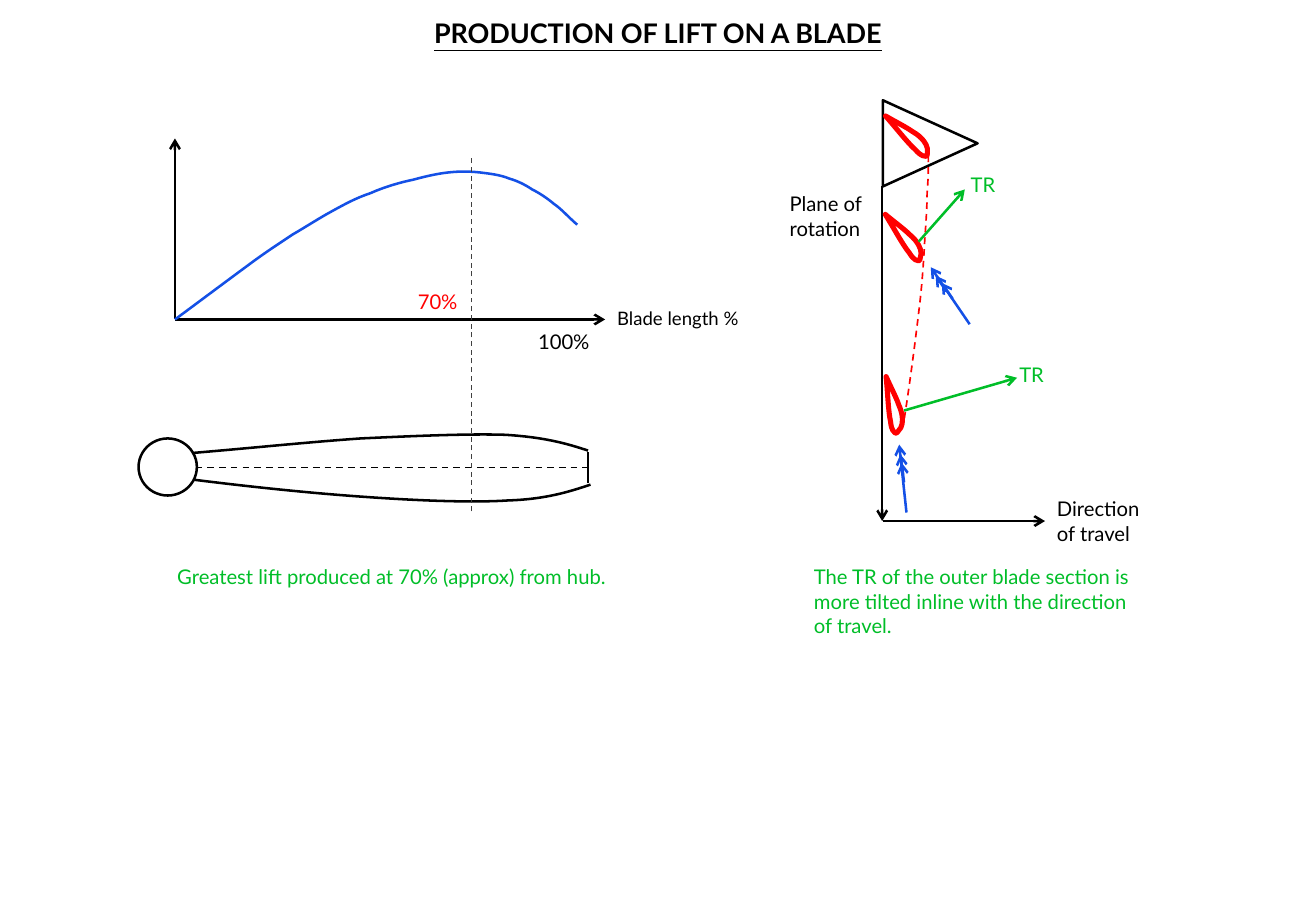
import dataclasses
import typing

import lxml.etree
import pptx
import pptx.dml.color
import pptx.enum.dml
import pptx.enum.shapes
import pptx.enum.text
import pptx.oxml.ns
import pptx.util

PX = 9144  # EMU in one px, 100 px to the inch
FONT = "Lato"
COLORS = {"black": "000000", "blue": "1450E6", "red": "FF0000", "green": "00BE28", "grey": "404040"}
DASH = pptx.enum.dml.MSO_LINE.DASH
SHAPE = pptx.enum.shapes.MSO_SHAPE
Point = tuple[int, int]


@dataclasses.dataclass(frozen=True)
class Label:
    text: str
    left: int
    top: int
    width: int
    height: int = 30
    color: str = "black"
    size: int = 12
    heading: bool = False


@dataclasses.dataclass(frozen=True)
class Stroke:
    begin: Point
    end: Point
    color: str = "black"
    width: float = 1.5
    dashed: bool = False
    arrow: bool = True


@dataclasses.dataclass(frozen=True)
class Curve:
    """Cubic curve: a start point, then two handles and an end per segment."""
    points: list[Point]
    color: str = "black"
    width: float = 1.5
    dashed: bool = False


@dataclasses.dataclass(frozen=True)
class Section:
    left: int
    top: int
    rotation: float


TITLE = Label("PRODUCTION OF LIFT ON A BLADE", 0, 9, 1083, 37, size=16, heading=True)
LENGTH_LABEL = Label("Blade length %", 498, 248, 148, size=11)
TRAVEL_LABEL = Label("Direction\nof travel", 860, 404, 94, 50)
LABELS = [
    TITLE,
    Label("70%", 334, 233, 134, color="red"),
    Label("100%", 433, 266, 173),
    Label("Greatest lift produced at 70% (approx) from hub.", 136, 460, 535, color="green"),
    Label("Plane of\nrotation", 640, 153, 90, 50),
    Label("TR", 789, 137, 94, color="green"),
    Label("TR", 829, 293, 94, color="green"),
    Label("The TR of the outer blade section is more tilted inline with the direction of travel.",
          660, 460, 295, 71, color="green"),
]

LIFT_AXIS = Stroke((144, 263), (144, 114))
LENGTH_AXIS = Stroke((144, 263), (498, 263))
PEAK_LINE = Stroke((388, 421), (388, 129), "grey", 0.75, dashed=True, arrow=False)
LIFT_CURVE = Curve([
    (144, 263), (163, 249), (183, 234), (202, 220), (218, 208), (229, 201), (241, 193),
    (253, 186), (262, 180), (273, 174), (284, 168), (293, 163), (305, 159),
    (316, 154), (330, 150), (340, 148), (351, 145), (360, 143), (369, 142),
    (378, 141), (386, 141), (395, 142), (403, 143), (412, 144), (419, 147),
    (426, 149), (432, 152), (438, 156), (444, 159), (450, 163), (456, 168),
    (462, 172), (468, 179), (475, 185)], "blue")

BLADE_EDGES = [
    Curve([(160, 395), (208, 401), (256, 406), (299, 409), (342, 412),
           (387, 414), (418, 412), (449, 411), (468, 405), (486, 399)]),
    Curve([(158, 373), (206, 369), (254, 364), (297, 361), (340, 359),
           (385, 357), (416, 358), (448, 360), (466, 365), (484, 371)]),
]
BLADE_LINES = [
    Stroke((484, 398), (484, 372), arrow=False),
    Stroke((161, 385), (486, 385), width=1, dashed=True, arrow=False),
]

ROTATION_AXIS = Stroke((726, 153), (726, 429))
TRAVEL_AXIS = Stroke((727, 429), (860, 429))
AEROFOIL = Curve([
    (0, 10), (14, 10), (29, 11), (37, 10), (45, 10), (46, 8), (47, 7),
    (48, 6), (45, 4), (43, 2), (41, 1), (39, 0), (36, 0),
    (32, 0), (30, 0), (24, 2), (19, 3), (9, 7), (0, 10)], "red", 3)
SECTIONS = [Section(724, 105, 48.5), Section(721, 189, 58.1), Section(712, 328, 84.4)]
TWIST_CURVE = Curve([
    (764, 128), (764, 137), (764, 147), (763, 159), (763, 171), (762, 183), (761, 199),
    (760, 216), (759, 234), (756, 258), (753, 283), (749, 314), (744, 346)], "red", 1, dashed=True)
REACTIONS = [
    Stroke((744, 338), (837, 311), "green"),
    Stroke((756, 199), (794, 156), "green"),
]
AIRFLOWS = [
    [Stroke((746, 422), (740, 366), "blue"),
     Stroke((744, 397), (742, 381), "blue"),
     Stroke((743, 389), (741, 374), "blue")],
    [Stroke((798, 267), (766, 220), "blue"),
     Stroke((784, 246), (775, 233), "blue"),
     Stroke((779, 240), (770, 227), "blue")],
]


def format_line(shape: typing.Any, style: Stroke | Curve) -> None:
    shape.line.color.rgb = pptx.dml.color.RGBColor.from_string(COLORS[style.color])
    shape.line.width = pptx.util.Pt(style.width)
    if style.dashed:
        shape.line.dash_style = DASH


def add_label(shapes: typing.Any, label: Label) -> typing.Any:
    box = shapes.add_textbox(*(n * PX for n in (label.left, label.top, label.width, label.height)))
    frame = box.text_frame
    frame.word_wrap = True
    frame.text = label.text
    for paragraph in frame.paragraphs:
        if label.heading:
            paragraph.alignment = pptx.enum.text.PP_ALIGN.CENTER
        for run in paragraph.runs:
            run.font.name = FONT
            run.font.size = pptx.util.Pt(label.size)
            run.font.color.rgb = pptx.dml.color.RGBColor.from_string(COLORS[label.color])
            if label.heading:
                run.font.bold = run.font.underline = True
    return box


def add_stroke(shapes: typing.Any, stroke: Stroke) -> typing.Any:
    connector = shapes.add_connector(pptx.enum.shapes.MSO_CONNECTOR.STRAIGHT,
                                     *(n * PX for n in stroke.begin + stroke.end))
    format_line(connector, stroke)
    if stroke.arrow:
        line = connector.line._get_or_add_ln()
        lxml.etree.SubElement(line, pptx.oxml.ns.qn("a:tailEnd"), type="arrow")
    lxml.etree.SubElement(connector._element.spPr, pptx.oxml.ns.qn("a:effectLst"))
    return connector


def add_curve(shapes: typing.Any, curve: Curve, left: int = 0, top: int = 0) -> typing.Any:
    """Draw the points as a polyline, then merge each three legs into a cubic segment."""
    builder = shapes.build_freeform(*curve.points[0], scale=PX)
    builder.add_line_segments(curve.points[1:], close=False)
    shape = builder.convert_to_shape(left * PX, top * PX)
    legs = list(shape._element.iter(pptx.oxml.ns.qn("a:lnTo")))
    for first in range(0, len(legs), 3):
        segment = lxml.etree.SubElement(legs[first].getparent(), pptx.oxml.ns.qn("a:cubicBezTo"))
        for leg in legs[first:first + 3]:
            segment.append(leg[0])
            leg.getparent().remove(leg)
    shape.shadow.inherit = False
    shape.fill.background()
    format_line(shape, curve)
    return shape


def add_outline(shapes: typing.Any, kind: typing.Any, left: int, top: int,
                width: int, height: int, rotation: float = 0) -> None:
    shape = shapes.add_shape(kind, left * PX, top * PX, width * PX, height * PX)
    shape.rotation = rotation
    shape.shadow.inherit = False
    shape.fill.background()
    format_line(shape, Curve([]))


def draw_lift_graph(shapes: typing.Any) -> None:
    add_stroke(shapes, LIFT_AXIS)
    add_stroke(shapes, LENGTH_AXIS).end_connect(add_label(shapes, LENGTH_LABEL), 1)
    add_curve(shapes, LIFT_CURVE)
    blade = shapes.add_group_shape().shapes
    add_outline(blade, SHAPE.OVAL, 114, 361, 48, 47)
    for edge in BLADE_EDGES:
        add_curve(blade, edge)
    for stroke in BLADE_LINES:
        add_stroke(blade, stroke)
    add_stroke(shapes, PEAK_LINE)


def draw_rotation_diagram(shapes: typing.Any) -> None:
    add_outline(shapes, SHAPE.ISOSCELES_TRIANGLE, 730, 79, 71, 78, rotation=90)
    add_stroke(shapes, ROTATION_AXIS)
    add_stroke(shapes, TRAVEL_AXIS).end_connect(add_label(shapes, TRAVEL_LABEL), 1)
    for section in SECTIONS:
        add_curve(shapes, AEROFOIL, section.left, section.top).rotation = section.rotation
    add_curve(shapes, TWIST_CURVE)
    for reaction in REACTIONS:
        add_stroke(shapes, reaction)
    for airflow in AIRFLOWS:
        group = shapes.add_group_shape().shapes
        for stroke in airflow:
            add_stroke(group, stroke)


def main() -> None:
    presentation = pptx.Presentation()
    presentation.slide_width, presentation.slide_height = 1083 * PX, 750 * PX
    slide = presentation.slides.add_slide(presentation.slide_layouts[6])
    draw_lift_graph(slide.shapes)
    draw_rotation_diagram(slide.shapes)
    for label in LABELS:
        add_label(slide.shapes, label)
    presentation.save("out.pptx")


if __name__ == "__main__":
    main()
